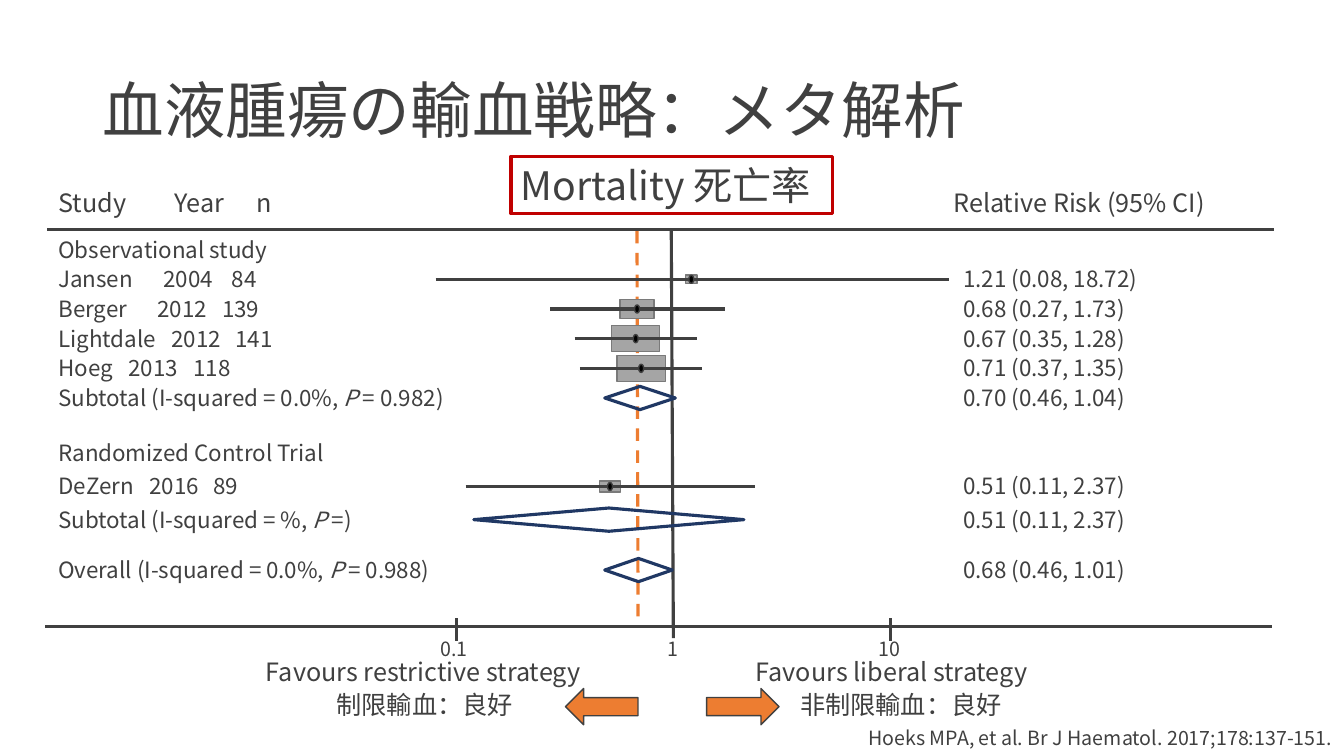
"""Builds a forest plot slide of mortality by transfusion strategy."""
from math import log10

from lxml import etree
from pptx import Presentation
from pptx.dml.color import RGBColor
from pptx.enum.dml import MSO_LINE
from pptx.enum.shapes import MSO_CONNECTOR, MSO_SHAPE
from pptx.enum.text import MSO_ANCHOR, MSO_AUTO_SIZE, PP_ALIGN
from pptx.oxml.ns import qn
from pptx.util import Pt

STRAIGHT = MSO_CONNECTOR.STRAIGHT
RECT, DIAMOND = MSO_SHAPE.RECTANGLE, MSO_SHAPE.DIAMOND
DOT, ARROW = MSO_SHAPE.FLOWCHART_CONNECTOR, MSO_SHAPE.RIGHT_ARROW
DASH = MSO_LINE.DASH
TOP, MIDDLE = MSO_ANCHOR.TOP, MSO_ANCHOR.MIDDLE
GROW, FIXED = MSO_AUTO_SIZE.SHAPE_TO_FIT_TEXT, MSO_AUTO_SIZE.NONE
LEFT, RIGHT = PP_ALIGN.LEFT, PP_ALIGN.RIGHT

INK = RGBColor(0x40, 0x40, 0x40)
BLACK = RGBColor(0, 0, 0)
GREY = RGBColor(0xA5, 0xA5, 0xA5)
GREY_EDGE = RGBColor(0x7A, 0x7A, 0x7A)
NAVY = RGBColor(0x20, 0x38, 0x64)
ORANGE = RGBColor(0xED, 0x7D, 0x31)
RED = RGBColor(0xC0, 0, 0)

FONT = "Noto Sans CJK JP"
LABEL_X, RISK_X = 34.6, 681
FIRST_Y, ROW_STEP = 199.5, 21.2
ONE_X, DECADE = 481, 154.8

STUDIES = [
    ("Jansen\t2004\t84", (75, 124), FIRST_Y, (1.21, 0.08, 18.72), (8, 6)),
    ("Berger\t2012\t139", (70.7, 117), FIRST_Y + ROW_STEP, (0.68, 0.27, 1.73), (24.5, 13.7)),
    ("Lightdale\t2012\t141", (80.7, 126.4), FIRST_Y + 2 * ROW_STEP, (0.67, 0.35, 1.28), (34.5, 18.7)),
    ("Hoeg\t2013\t118", (50, 96.4), FIRST_Y + 3 * ROW_STEP, (0.71, 0.37, 1.35), (34.5, 18.7)),
    ("DeZern\t2016\t89", (65, 110.7), 347.5, (0.51, 0.11, 2.37), (15, 8)),
]
SUMMARIES = [
    ("Subtotal (I-squared = 0.0%, *P *= 0.982)", FIRST_Y + 4 * ROW_STEP, (0.70, 0.46, 1.04), 432, 50.4),
    ("Subtotal (I-squared = %, *P* =)", 371.2, (0.51, 0.11, 2.37), 338.4, 193),
    ("Overall (I-squared = 0.0%, *P *= 0.988)", 407.2, (0.68, 0.46, 1.01), 432, 48.2),
]
HEADERS = [("Study", 34.6, 66), ("Year", 117.4, 54), ("n", 176.4, 26), ("Relative Risk (95% CI)", 673.9, 216)]
TICKS = [("0.1", 307.4, 38), ("1", 469.4, 24), ("10", 620.6, 33)]
CAPTIONS = [
    ("Favours restrictive strategy", 182.9, 465.1, 256),
    ("Favours liberal strategy", 532.8, 465.1, 222),
    ("制限輸血：良好", 233.3, 488.9, 142),
    ("非制限輸血：良好", 564.5, 488.9, 160),
]


def axis_x(risk):
    """Return the horizontal place of a relative risk on the log axis."""
    return ONE_X + DECADE * log10(risk)


class ForestSlide:
    """Holds the slide and its style, and draws each kind of element."""

    def __init__(self, prs):
        """Add a blank slide."""
        self.shapes = prs.slides.add_slide(prs.slide_layouts[6]).shapes

    def line(self, x1, y1, x2, y2, color=INK, dash=None):
        """Draw a straight line."""
        sp = self.shapes.add_connector(STRAIGHT, Pt(x1), Pt(y1), Pt(x2), Pt(y2))
        sp.line.color.rgb = color
        sp.line.width = Pt(2.25)
        if dash:
            sp.line.dash_style = dash
        etree.SubElement(sp._element.spPr, qn("a:effectLst"))

    def shape(self, kind, x, y, w, h, fill=None, edge=INK, width=1):
        """Draw a preset shape and return it."""
        sp = self.shapes.add_shape(kind, Pt(x), Pt(y), Pt(w), Pt(h))
        sp.shadow.inherit = False
        if fill is None:
            sp.fill.background()
        else:
            sp.fill.solid()
            sp.fill.fore_color.rgb = fill
        sp.line.color.rgb = edge
        sp.line.width = Pt(width)
        return sp

    def centred(self, kind, cx, cy, w, h, fill, edge):
        """Draw a shape around a centre point."""
        self.shape(kind, cx - w / 2, cy - h / 2, w, h, fill, edge)

    def set_text(self, sp, text, size, align=LEFT, tabs=()):
        """Fill a shape with one paragraph; asterisks enclose italics."""
        tf = sp.text_frame
        tf.word_wrap = True
        tf.auto_size = GROW
        tf.vertical_anchor = TOP
        p = tf.paragraphs[0]
        p.alignment = align
        for i, part in enumerate(text.split("*")):
            r = p.add_run()
            r.text = part
            r.font.name = FONT
            r.font.size = Pt(size)
            r.font.color.rgb = INK
            r.font.italic = i % 2 == 1
            etree.SubElement(r._r.get_or_add_rPr(), qn("a:ea"), typeface=FONT)
        if tabs:
            stops = etree.SubElement(p._p.get_or_add_pPr(), qn("a:tabLst"))
            for pos in tabs:
                etree.SubElement(stops, qn("a:tab"), pos=str(int(Pt(pos))), algn="l")
        return tf

    def text(self, text, x, y, w, h=26.6, size=16, align=LEFT, tabs=()):
        """Add a text box and return its frame."""
        sp = self.shapes.add_textbox(Pt(x), Pt(y), Pt(w), Pt(h))
        return self.set_text(sp, text, size, align, tabs)

    def row(self, label, y, risk, tabs=()):
        """Add the label and the relative risk of one row."""
        self.text(label, LABEL_X, y - 13.5, 190 if tabs else 334, tabs=tabs)
        mean, low, high = risk
        self.text(f"{mean:.2f} ({low:.2f}, {high:.2f})", RISK_X, y - 13.5, 164)

    def study(self, label, tabs, y, risk, box):
        """Draw one study with its weight box and interval."""
        mean, low, high = map(axis_x, risk)
        self.centred(RECT, mean, y, *box, GREY, GREY_EDGE)
        self.line(low, y, high, y)
        self.centred(DOT, mean, y, 3.6, 5.8, BLACK, INK)
        self.row(label, y, risk, tabs)

    def summary(self, label, y, risk, x, w):
        """Draw one pooled estimate as a diamond."""
        self.shape(DIAMOND, x, y - 8.3, w, 16.6, edge=NAVY, width=2.25)
        self.row(label, y, risk)


def main():
    """Build and save the slide."""
    prs = Presentation()
    prs.slide_width, prs.slide_height = Pt(960), Pt(540)
    s = ForestSlide(prs)

    s.line(455, 164.9, 455.8, 447.8, ORANGE, DASH)
    title = s.text("血液腫瘍の輸血戦略：メタ解析", 66.2, 28.8, 828, 104.4, 44)
    title.auto_size = FIXED
    title.vertical_anchor = MIDDLE
    title.paragraphs[0].line_spacing = 0.9

    s.line(33.8, 164.2, 910, 164.2)
    s.line(479.5, 164.2, ONE_X, 455.8)
    for risk in (0.1, 10):
        s.line(axis_x(risk), 441.7, axis_x(risk), 458)
    for label, x, w in HEADERS:
        s.text(label, x, 130.3, w, 28.8, 18)
    s.text("Hoeks MPA, et al. Br J Haematol. 2017;178:137-151.", 573.8, 514.8, 385.2, 24.5, 14, RIGHT)
    s.line(32.4, 447.8, 908.6, 447.8)

    s.text("Observational study", LABEL_X, 164.9, 200)
    s.text("Randomized Control Trial", LABEL_X, 310.3, 240)
    for study in STUDIES:
        s.study(*study)
    for summary in SUMMARIES:
        s.summary(*summary)

    for label, x, w in TICKS:
        s.text(label, x, 451.4, w, 24.5, 14)
    for label, x, y, w in CAPTIONS:
        s.text(label, x, y, w, 28.8, 18)
    banner = s.shape(RECT, 365, 111.6, 229.7, 41, edge=RED, width=2.25)
    s.set_text(banner, "Mortality 死亡率", 28).word_wrap = False
    for x, angle in ((504.7, 0), (403.9, 180)):
        s.shape(ARROW, x, 491.8, 51.8, 25.9, ORANGE).rotation = angle

    prs.save("out.pptx")


if __name__ == "__main__":
    main()
